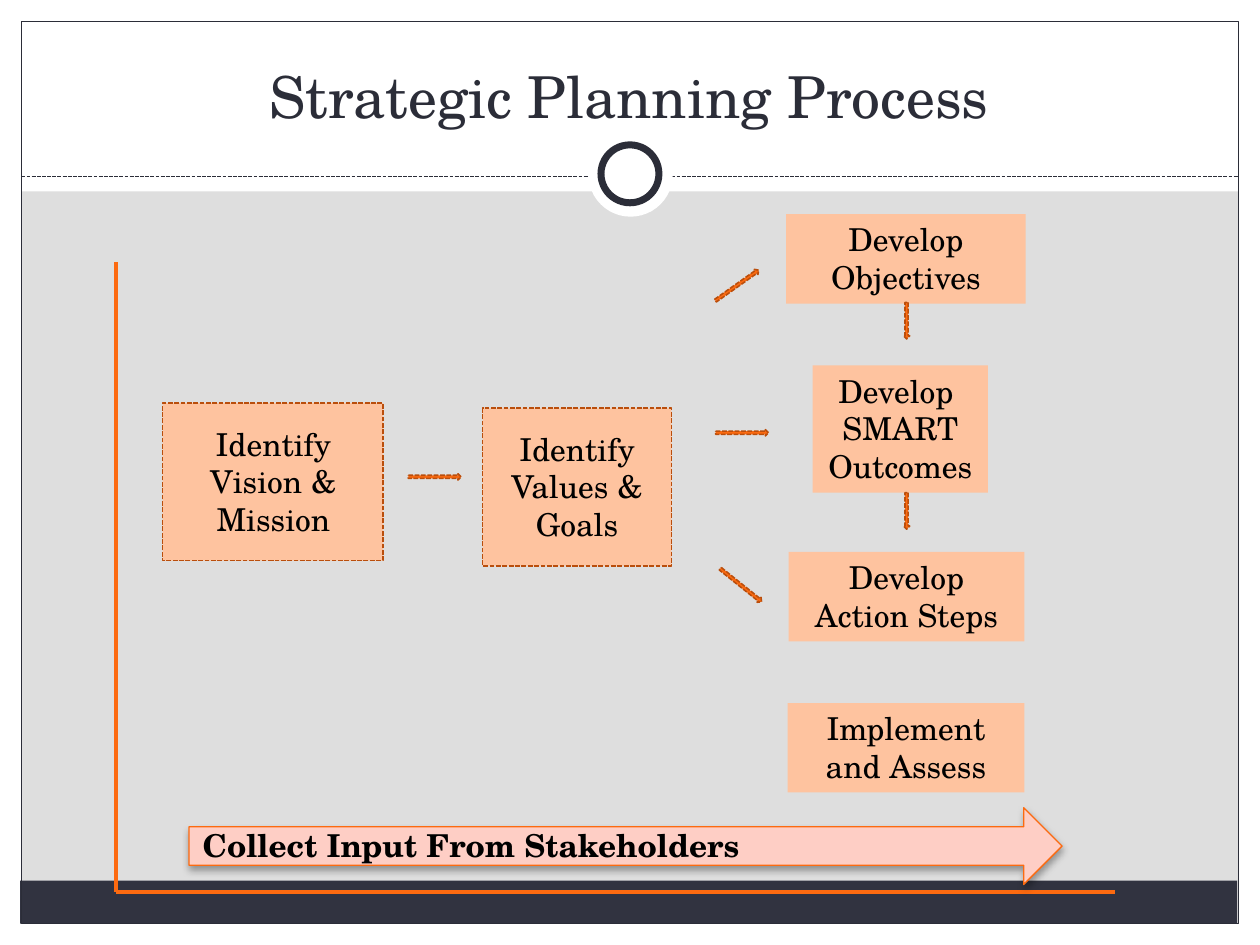
from lxml.etree import SubElement
from pptx import Presentation
from pptx.dml.color import RGBColor
from pptx.enum.dml import MSO_LINE
from pptx.enum.shapes import MSO_CONNECTOR, MSO_SHAPE
from pptx.enum.text import MSO_ANCHOR, MSO_AUTO_SIZE, PP_ALIGN
from pptx.oxml.ns import qn
from pptx.util import Inches, Pt

COLORS = {
    "background": "DEDEDE",
    "white": "FFFFFF",
    "dark": "2B2D38",
    "footer": "313340",
    "orange": "FC6A10",
    "rust": "BA4E0C",
    "peach": "FEC39F",
    "pink": "FECEC5",
    "black": "000000",
}
FONT = "TeX Gyre Schola"
DASHED = ("rust", 0.9, MSO_LINE.SQUARE_DOT)


def rgb(name):
    return RGBColor.from_string(COLORS[name])


class Deck:
    def __init__(self):
        self.prs = Presentation()
        self.prs.slide_width = Inches(10)
        self.prs.slide_height = Inches(7.5)
        self.s = self.prs.slides.add_slide(self.prs.slide_layouts[6])
        fill = self.s.background.fill
        fill.solid()
        fill.fore_color.rgb = rgb("background")

    def outline(self, line, color, width, dash=None):
        line.color.rgb = rgb(color)
        line.width = Pt(width)
        if dash:
            line.dash_style = dash

    def shape(self, box, fill=None, line=None, kind=MSO_SHAPE.RECTANGLE, rotation=0):
        sp = self.s.shapes.add_shape(kind, *map(Inches, box))
        sp.shadow.inherit = False
        sp.rotation = rotation
        if fill:
            sp.fill.solid()
            sp.fill.fore_color.rgb = rgb(fill)
        else:
            sp.fill.background()
        if line:
            self.outline(sp.line, *line)
        else:
            sp.line.fill.background()
        return sp

    def arrow(self, box, rotation=0):
        return self.shape(box, "orange", DASHED, MSO_SHAPE.RIGHT_ARROW, rotation)

    def line(self, start, end, style):
        cxn = self.s.shapes.add_connector(
            MSO_CONNECTOR.STRAIGHT, *map(Inches, start + end))
        self.outline(cxn.line, *style)
        SubElement(cxn._element.spPr, qn("a:effectLst"))

    def label(self, sp, lines, size=18, color="black", bold=False,
              align=PP_ALIGN.CENTER, anchor=MSO_ANCHOR.TOP, grow=True):
        tf = sp.text_frame
        tf.word_wrap = True
        tf.vertical_anchor = anchor
        tf.auto_size = MSO_AUTO_SIZE.SHAPE_TO_FIT_TEXT if grow else MSO_AUTO_SIZE.NONE
        for i, text in enumerate(lines):
            p = tf.add_paragraph() if i else tf.paragraphs[0]
            p.alignment = align
            r = p.add_run()
            r.text = text
            r.font.name = FONT
            r.font.size = Pt(size)
            r.font.bold = bold
            r.font.color.rgb = rgb(color)

    def text(self, box, lines, **style):
        self.label(self.s.shapes.add_textbox(*map(Inches, box)), lines, **style)

    def shadow(self, sp, color, alpha, blur, distance, angle):
        effects = sp._element.spPr.find(qn("a:effectLst"))
        shadow = SubElement(effects, qn("a:outerShdw"), blurRad=str(Pt(blur)),
                            dist=str(Pt(distance)), dir=str(angle * 60000),
                            rotWithShape="0")
        clr = SubElement(shadow, qn("a:srgbClr"), val=COLORS[color])
        SubElement(clr, qn("a:alpha"), val=str(alpha * 1000))


def add_frame(deck):
    for box in ((0, 7.33, 10, 0.17), (0, 0, 10, 1.52),
                (0, 0, 0.17, 7.5), (9.83, 0, 0.17, 7.5)):
        deck.shape(box, "white")
    deck.shape((0.16, 6.99, 9.66, 0.34), "footer")
    deck.shape((0.17, 0.17, 9.66, 7.16), line=("dark", 0.75))
    deck.line((0.17, 1.4), (9.83, 1.4), ("dark", 0.75, MSO_LINE.SQUARE_DOT))
    deck.shape((4.67, 1.05, 0.67, 0.67), "white", kind=MSO_SHAPE.OVAL)
    deck.shape((4.77, 1.15, 0.46, 0.46), "white", ("dark", 4), MSO_SHAPE.OVAL)
    deck.text((0.33, 0.25, 9.33, 0.83), ["Strategic Planning Process"],
              size=33, color="dark", anchor=MSO_ANCHOR.BOTTOM, grow=False)


def add_process(deck):
    corner = (0.92, 7.08)
    deck.line((0.92, 2.08), corner, ("orange", 2))
    deck.line(corner, (8.85, 7.08), ("orange", 2))

    for box, text_box, text in (
        ((1.29, 3.2, 1.75, 1.25), (1.42, 3.32, 1.5, 1.01), "Identify Vision & Mission"),
        ((3.83, 3.24, 1.5, 1.25), (3.83, 3.36, 1.5, 1.01), "Identify Values & Goals"),
    ):
        deck.shape(box, "peach", DASHED)
        deck.text(text_box, [text])

    for box, lines in (
        ((6.24, 1.7, 1.9, 0.71), ["Develop Objectives"]),
        ((6.45, 2.9, 1.39, 1.01), ["Develop ", "SMART Outcomes"]),
        ((6.26, 4.38, 1.87, 0.71), ["Develop", "Action Steps"]),
        ((6.25, 5.58, 1.88, 0.71), ["Implement and Assess"]),
    ):
        deck.label(deck.shape(box, "peach"), lines)

    banner = deck.shape((1.5, 6.41, 6.93, 0.61), "pink", ("orange", 0.75),
                        MSO_SHAPE.RIGHT_ARROW)
    deck.shadow(banner, "black", alpha=35, blur=4, distance=2, angle=90)
    deck.text((1.51, 6.51, 6.68, 0.4), ["Collect Input From Stakeholders"],
              bold=True, align=PP_ALIGN.LEFT)

    for x, y, length, rotation in (
        (3.24, 3.76, 0.42, 0),
        (5.64, 2.24, 0.42, 324.7),
        (5.67, 4.62, 0.42, 38.7),
        (5.68, 3.41, 0.42, 0),
        (7.05, 2.52, 0.29, 90),
        (7.05, 4.03, 0.29, 90),
    ):
        deck.arrow((x, y, length, 0.05), rotation)


def main():
    deck = Deck()
    add_frame(deck)
    add_process(deck)
    deck.prs.save("out.pptx")


if __name__ == "__main__":
    main()
